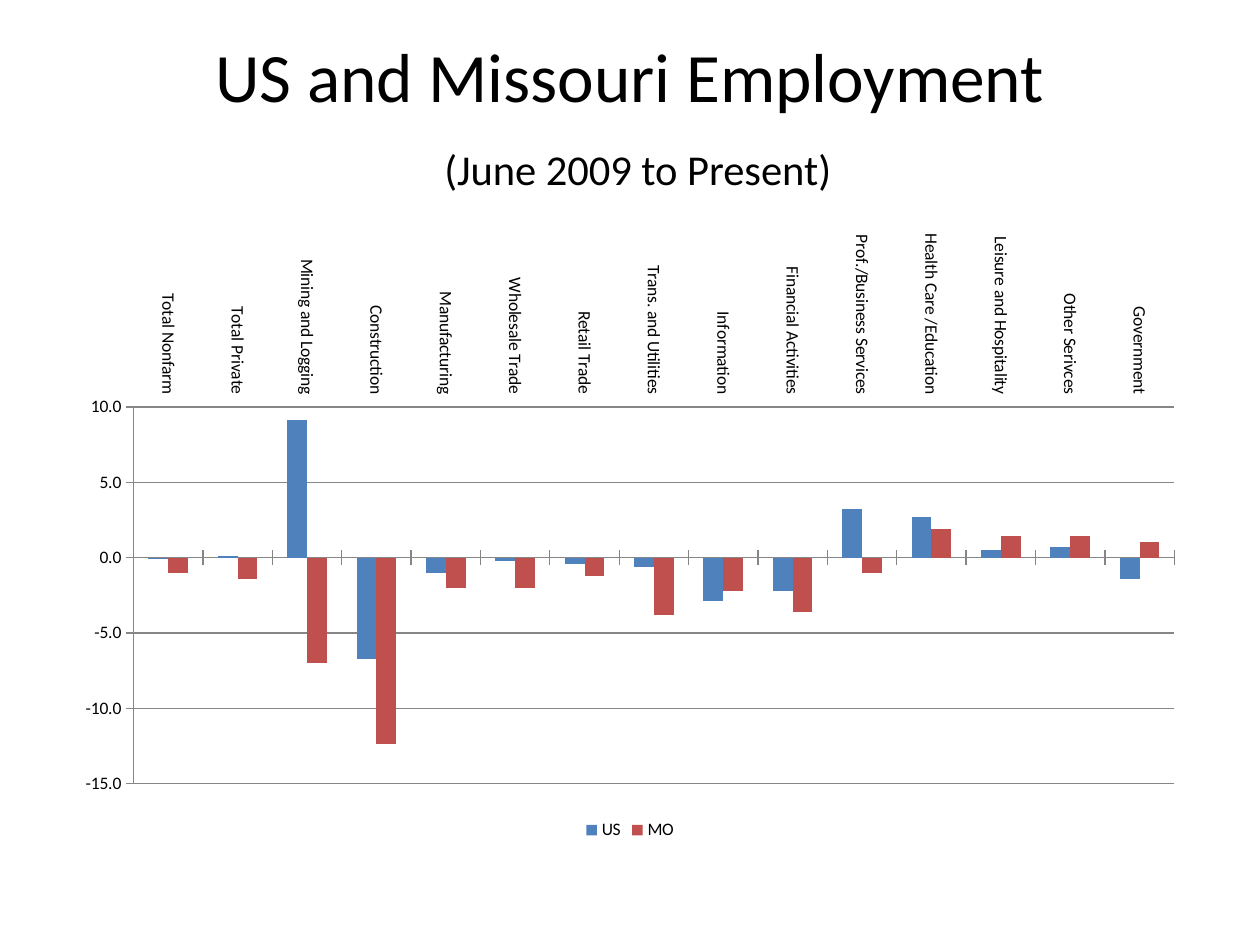
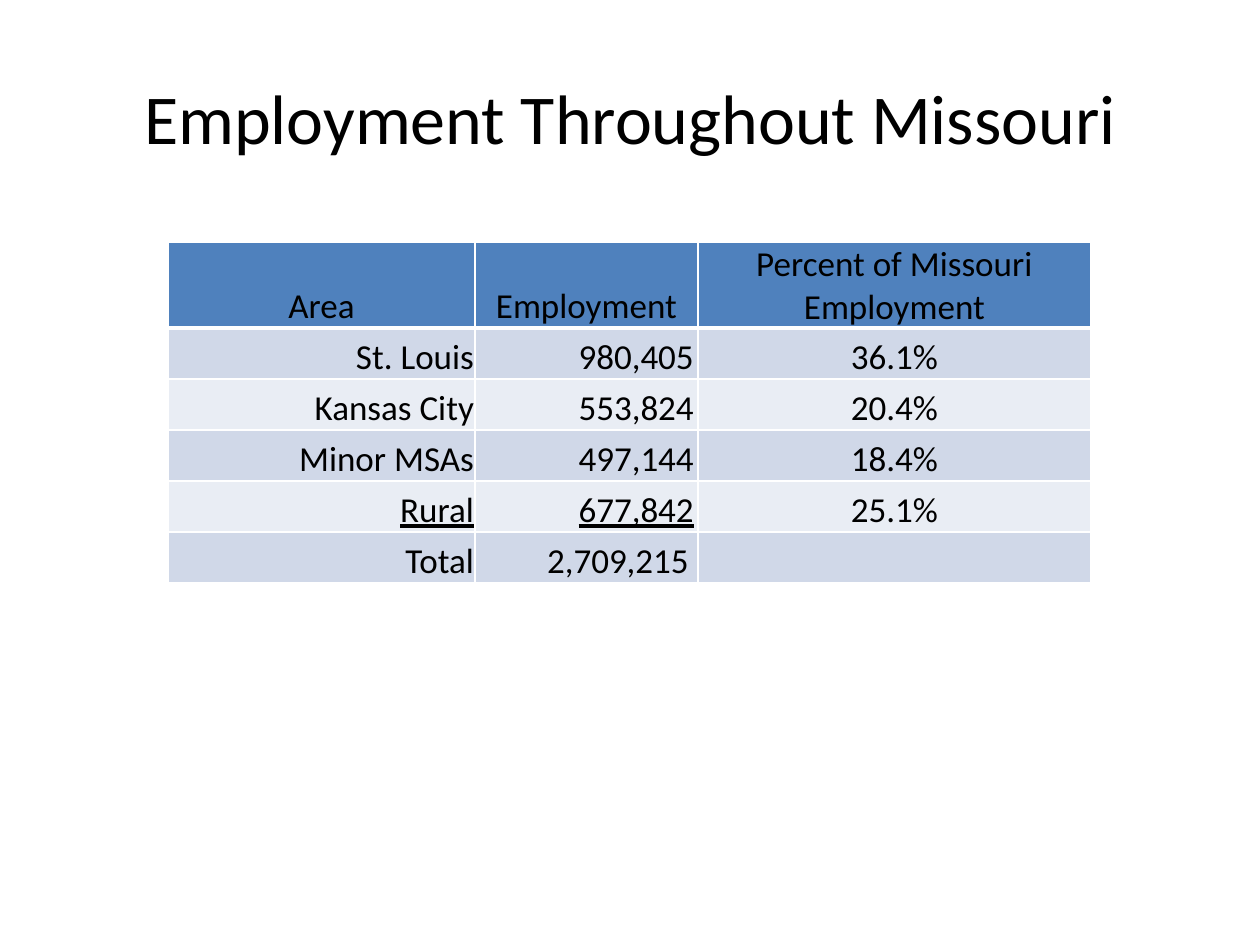
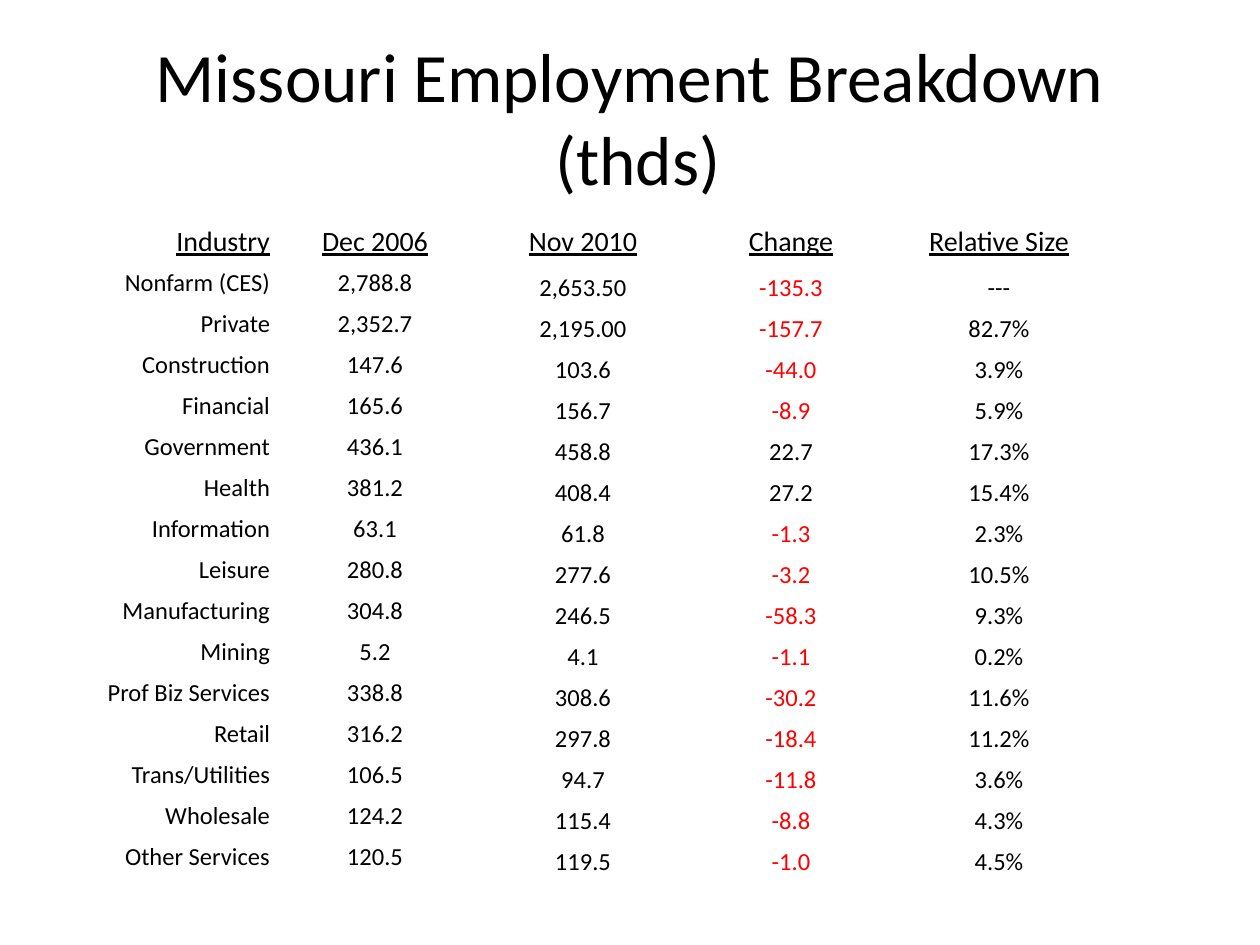
from dataclasses import dataclass

from lxml import etree
from pptx import Presentation
from pptx.chart.data import CategoryChartData
from pptx.dml.color import RGBColor
from pptx.enum.chart import (XL_CHART_TYPE, XL_LEGEND_POSITION,
                             XL_TICK_LABEL_POSITION, XL_TICK_MARK)
from pptx.enum.text import MSO_ANCHOR, PP_ALIGN
from pptx.oxml.ns import qn
from pptx.util import Emu, Pt

LEFT, MID, RIGHT = PP_ALIGN.LEFT, PP_ALIGN.CENTER, PP_ALIGN.RIGHT
CENTER, BOTTOM = MSO_ANCHOR.MIDDLE, MSO_ANCHOR.BOTTOM
COLUMNS = XL_CHART_TYPE.COLUMN_CLUSTERED
CROSS = XL_TICK_MARK.CROSS
HIGH, LOW = XL_TICK_LABEL_POSITION.HIGH, XL_TICK_LABEL_POSITION.LOW
FOOT = XL_LEGEND_POSITION.BOTTOM
SCALE = 914400 / 126


@dataclass(frozen=True)
class Theme:
    font: str = "Calibri"
    ink: str = "000000"
    loss: str = "FF0000"
    paper: str = "FFFFFF"
    blue: str = "4F81BD"
    red: str = "C0504D"
    grid: str = "868686"
    bands: tuple = ("E9EDF4", "D0D8E8")
    title: float = 40
    fitted: float = 39.6
    sub: float = 24.3
    area: float = 20
    head: float = 16
    body: float = 14
    chart: float = 10


THEME = Theme()

# Employment change by industry: name, US, MO
CHANGES = [
    ("Total Nonfarm", -0.1, -1),
    ("Total Private", 0.1, -1.4),
    ("Mining and Logging", 9.1, -7),
    ("Construction", -6.7, -12.4),
    ("Manufacturing", -1, -2),
    ("Wholesale Trade", -0.2, -2),
    ("Retail Trade", -0.4, -1.2),
    ("Trans. and Utilities", -0.6, -3.8),
    ("Information", -2.9, -2.2),
    ("Financial Activities", -2.2, -3.6),
    ("Prof./Business Services", 3.2, -1),
    ("Health Care /Education", 2.7, 1.9),
    ("Leisure and Hospitality", 0.5, 1.4),
    ("Other Serivces", 0.7, 1.4),
    ("Government", -1.4, 1),
]

AREAS = [
    ("Area", "Employment", "Percent of Missouri Employment"),
    ("St. Louis", "980,405", "36.1%"),
    ("Kansas City", "553,824", "20.4%"),
    ("Minor MSAs", "497,144", "18.4%"),
    ("Rural", "677,842", "25.1%"),
    ("Total", "2,709,215", ""),
]

SECTORS = [
    ("Industry", "Dec 2006", "Nov 2010", "Change", "Relative Size"),
    ("Nonfarm (CES)", "2,788.8", "2,653.50", "-135.3", "---"),
    ("Private", "2,352.7", "2,195.00", "-157.7", "82.7%"),
    ("Construction", "147.6", "103.6", "-44.0", "3.9%"),
    ("Financial", "165.6", "156.7", "-8.9", "5.9%"),
    ("Government", "436.1", "458.8", "22.7", "17.3%"),
    ("Health", "381.2", "408.4", "27.2", "15.4%"),
    ("Information", "63.1", "61.8", "-1.3", "2.3%"),
    ("Leisure", "280.8", "277.6", "-3.2", "10.5%"),
    ("Manufacturing", "304.8", "246.5", "-58.3", "9.3%"),
    ("Mining", "5.2", "4.1", "-1.1", "0.2%"),
    ("Prof Biz Services", "338.8", "308.6", "-30.2", "11.6%"),
    ("Retail", "316.2", "297.8", "-18.4", "11.2%"),
    ("Trans/Utilities", "106.5", "94.7", "-11.8", "3.6%"),
    ("Wholesale", "124.2", "115.4", "-8.8", "4.3%"),
    ("Other Services", "120.5", "119.5", "-1.0", "4.5%"),
]


def px(count):
    return Emu(round(count * SCALE))


def rgb(code):
    return RGBColor.from_string(code)


# Text
def style(font, size, color=THEME.ink, under=None):
    font.name, font.size = THEME.font, Pt(size)
    font.color.rgb = rgb(color)
    if under is not None:
        font.underline = under


def add_run(para, text, size, color=THEME.ink, under=None):
    run = para.add_run()
    run.text = text
    style(run.font, size, color, under)


def add_title(slide, *lines):
    """Each line is a list of (text, size) runs."""
    frame = slide.shapes.add_textbox(px(63), px(38), px(1134), px(157)).text_frame
    frame.word_wrap = True
    frame.vertical_anchor = CENTER
    para = frame.paragraphs[0]
    para.alignment = MID
    for row, line in enumerate(lines):
        if row:
            para.add_line_break()
        for text, size in line:
            add_run(para, text, size)


def add_tab(para, stop):
    tabs = etree.SubElement(para._p.get_or_add_pPr(), qn("a:tabLst"))
    etree.SubElement(tabs, qn("a:tab"), pos=str(px(stop)), algn="r")


# Tables
def add_edges(cell, top, bottom):
    props = cell._tc.get_or_add_tcPr()
    for side, width in (("L", 1), ("R", 1), ("T", top), ("B", bottom)):
        line = etree.SubElement(props, qn("a:ln" + side), w=str(Pt(width)))
        fill = etree.SubElement(line, qn("a:solidFill"))
        etree.SubElement(fill, qn("a:srgbClr"), val=THEME.paper)


def add_grid(slide, left, top, widths, heights):
    """Add a plain table with white rules, heavier below the header."""
    frame = slide.shapes.add_table(len(heights), len(widths), px(left), px(top),
                                   px(sum(widths)), px(sum(heights)))
    table = frame.table
    table.first_row = table.horz_banding = False
    for col, width in zip(table.columns, widths):
        col.width = px(width)
    for index, (row, height) in enumerate(zip(table.rows, heights)):
        row.height = px(height)
        for cell in row.cells:
            add_edges(cell, 3 if index == 1 else 1, 3 if index == 0 else 1)
            cell.margin_left = cell.margin_right = cell.margin_top = px(1)
            cell.margin_bottom = 0
            cell.fill.background()
    return table


def fill_cell(cell, text, size, align, anchor, color=THEME.ink, under=None):
    cell.vertical_anchor = anchor
    para = cell.text_frame.paragraphs[0]
    para.alignment = align
    if text:
        add_run(para, text, size, color, under)
    return para


def add_areas(slide):
    table = add_grid(slide, 168, 242, [307, 223, 393], [86] + [51] * 5)
    for row, record in enumerate(AREAS):
        for col, text in enumerate(record):
            cell = table.cell(row, col)
            cell.fill.solid()
            cell.fill.fore_color.rgb = rgb(THEME.bands[row % 2] if row else THEME.blue)
            count = row > 0 and col == 1
            align = (RIGHT, LEFT, MID)[col] if row else MID
            under = True if record[0] == "Rural" and col < 2 else None
            para = fill_cell(cell, "\t" + text if count else text,
                             THEME.area, align, BOTTOM, under=under)
            if count:
                add_tab(para, 213 if record[0] == "Total" else 218)


def add_sectors(slide):
    table = add_grid(slide, 63, 221, [208] * 5, [41] * len(SECTORS))
    for row, record in enumerate(SECTORS):
        for col, text in enumerate(record):
            loss = row > 0 and col == 3 and text.startswith("-")
            fill_cell(table.cell(row, col), text,
                      THEME.body if row else THEME.head,
                      MID if col else RIGHT,
                      BOTTOM if row and col > 1 else CENTER,
                      THEME.loss if loss else THEME.ink,
                      None if row else True)


# Chart
def rule(line):
    line.color.rgb = rgb(THEME.grid)
    line.width = Pt(0.75)


def add_bars(slide):
    names, nation, state = zip(*CHANGES)
    data = CategoryChartData(number_format="0.0")
    data.categories = names
    data.add_series("US", nation)
    data.add_series("MO", state)
    chart = slide.shapes.add_chart(COLUMNS, px(63), px(221), px(1134), px(624),
                                   data).chart
    chart.has_title = False
    style(chart.font, THEME.chart)
    chart.has_legend = True
    chart.legend.position = FOOT
    chart.legend.include_in_layout = False

    plot = chart.plots[0]
    plot.gap_width, plot.overlap = 150, 0
    plot.vary_by_categories = False
    for bars, color in zip(plot.series, (THEME.blue, THEME.red)):
        bars.invert_if_negative = False
        bars.format.fill.solid()
        bars.format.fill.fore_color.rgb = rgb(color)

    for axis, place in ((chart.category_axis, HIGH), (chart.value_axis, LOW)):
        axis.major_tick_mark = CROSS
        axis.tick_label_position = place
        style(axis.tick_labels.font, THEME.chart)
        rule(axis.format.line)
    # Turn the industry names to read downwards
    chart.category_axis._element.get_or_add_txPr().bodyPr.set("rot", "5400000")

    value = chart.value_axis
    value.minimum_scale, value.maximum_scale, value.major_unit = -15, 10, 5
    value.tick_labels.number_format = "0.0"
    value.tick_labels.number_format_is_linked = False
    value.has_major_gridlines = True
    rule(value.major_gridlines.format.line)


def main():
    deck = Presentation()
    deck.slide_width, deck.slide_height = px(1260), px(945)
    blank = deck.slide_layouts[6]

    # Change since the recession
    slide = deck.slides.add_slide(blank)
    add_title(slide, [("US and Missouri Employment", THEME.fitted)],
              [(" ", THEME.fitted), ("(June 2009 to Present)", THEME.sub)])
    add_bars(slide)

    # Employment by area
    slide = deck.slides.add_slide(blank)
    add_title(slide, [("Employment Throughout Missouri", THEME.title)])
    add_areas(slide)

    # Employment by industry
    slide = deck.slides.add_slide(blank)
    add_title(slide, [("Missouri Employment Breakdown", THEME.fitted)],
              [(" (thds)", THEME.fitted)])
    add_sectors(slide)

    deck.save("out.pptx")


if __name__ == "__main__":
    main()
